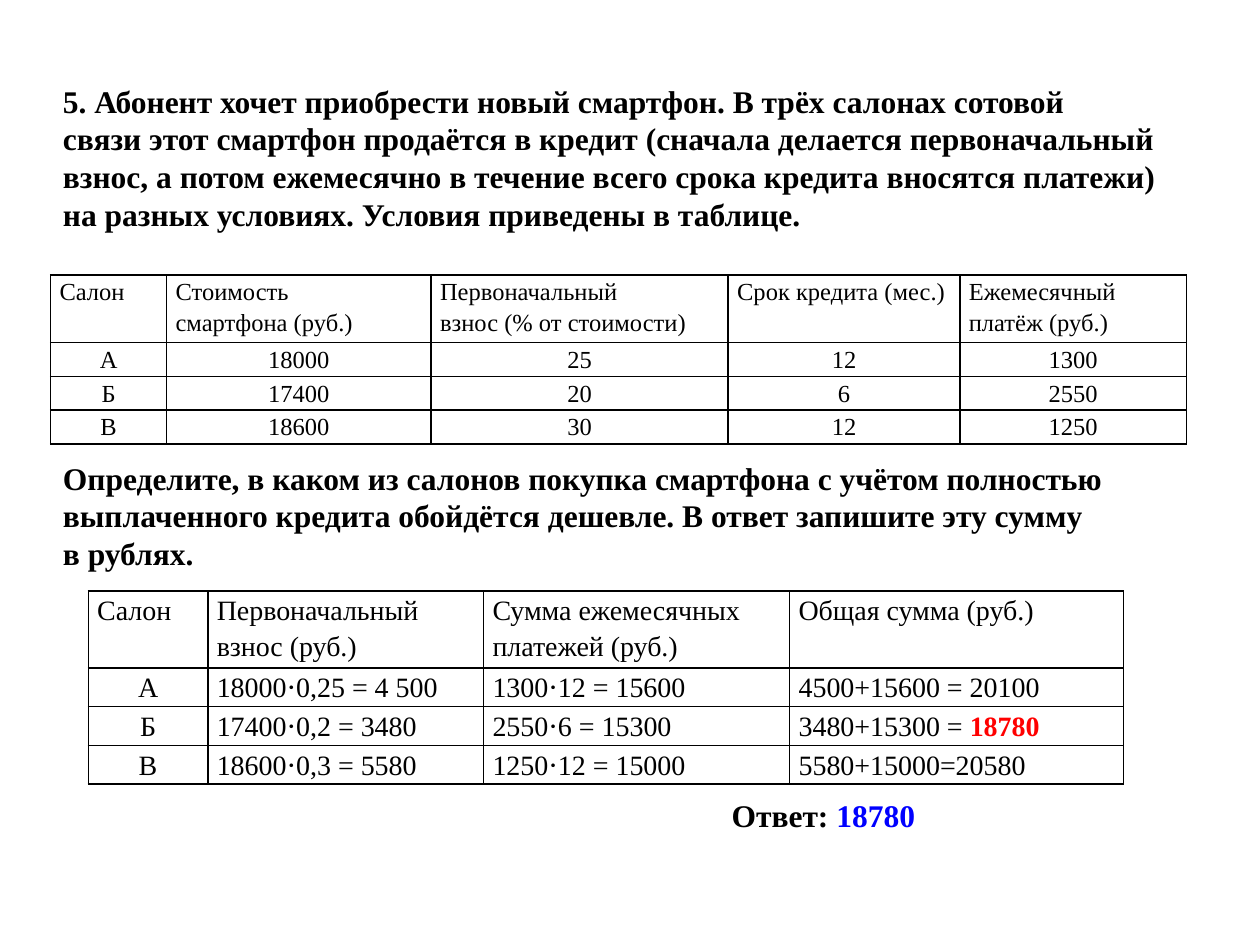
from pptx import Presentation
from pptx.dml.color import RGBColor
from pptx.enum.text import MSO_AUTO_SIZE, PP_ALIGN
from pptx.oxml.ns import qn
from pptx.util import Cm, Pt
from lxml.etree import SubElement

BLACK = RGBColor(0, 0, 0)
WHITE = RGBColor(255, 255, 255)
RED = RGBColor(255, 0, 0)
BLUE = RGBColor(0, 0, 255)

INTRO = """5. Абонент хочет приобрести новый смартфон. В трёх салонах сотовой
связи этот смартфон продаётся в кредит (сначала делается первоначальный \
взнос, а потом ежемесячно в течение всего срока кредита вносятся платежи) \
на разных условиях. Условия приведены в таблице."""

QUESTION = """Определите, в каком из салонов покупка смартфона с учётом полностью
выплаченного кредита обойдётся дешевле. В ответ запишите эту сумму
в рублях."""

OFFERS = [
    ["Салон", "Стоимость\nсмартфона (руб.)",
     "Первоначальный\nвзнос (% от стоимости)",
     "Срок кредита (мес.)", "Ежемесячный\nплатёж (руб.)"],
    ["А", "18000", "25", "12", "1300"],
    ["Б", "17400", "20", "6", "2550"],
    ["В", "18600", "30", "12", "1250"],
]

SOLUTION = [
    ["Салон", "Первоначальный\nвзнос (руб.)",
     "Сумма ежемесячных платежей (руб.)", "Общая сумма (руб.)"],
    ["А", "18000⋅0,25 = 4 500", "1300⋅12 = 15600", "4500+15600 = 20100"],
    ["Б", "17400⋅0,2 = 3480", "2550⋅6 = 15300", "3480+15300 = |18780"],
    ["В", "18600⋅0,3 = 5580", "1250⋅12 = 15000", "5580+15000=20580"],
]


class SlideBuilder:
    font = "Times New Roman"

    def __init__(self, s):
        self.s = s

    def fill_text(self, tf, text, size, bold=False, accent=BLACK,
                  align=PP_ALIGN.LEFT, spacing=None):
        for i, line in enumerate(text.split("\n")):
            p = tf.add_paragraph() if i else tf.paragraphs[0]
            p.alignment = align
            p.line_spacing = spacing
            p.font.name = self.font
            p.font.size = Pt(size)
            p.font.bold = bold
            p.font.color.rgb = BLACK
            plain, _, marked = line.partition("|")
            p.add_run().text = plain
            if marked:
                r = p.add_run()
                r.text = marked
                r.font.bold = True
                r.font.color.rgb = accent

    def text(self, left, top, width, height, text, accent=BLACK, wrap=True):
        sp = self.s.shapes.add_textbox(Cm(left), Cm(top), Cm(width), Cm(height))
        tf = sp.text_frame
        tf.word_wrap = wrap
        tf.auto_size = MSO_AUTO_SIZE.SHAPE_TO_FIT_TEXT
        self.fill_text(tf, text, 18, True, accent)

    def border(self, cell):
        tc_pr = cell._tc.get_or_add_tcPr()
        for side in ("lnL", "lnR", "lnT", "lnB"):
            ln = SubElement(tc_pr, qn(f"a:{side}"), w=str(Pt(1)))
            fill = SubElement(ln, qn("a:solidFill"))
            SubElement(fill, qn("a:srgbClr"), val=str(BLACK))

    def table(self, left, top, widths, heights, rows, size, centred,
              fill=None, accent=BLACK):
        table = self.s.shapes.add_table(
            len(rows), len(widths), Cm(left), Cm(top),
            Cm(sum(widths)), Cm(sum(heights))).table
        table.first_row = table.horz_banding = False
        for column, width in zip(table.columns, widths):
            column.width = Cm(width)
        for i, (row, height) in enumerate(zip(rows, heights)):
            table.rows[i].height = Cm(height)
            for j, text in enumerate(row):
                cell = table.cell(i, j)
                cell.margin_left = cell.margin_right = Cm(0.18)
                cell.margin_top = cell.margin_bottom = 0
                self.border(cell)
                if fill is None:
                    cell.fill.background()
                else:
                    cell.fill.solid()
                    cell.fill.fore_color.rgb = fill
                align = PP_ALIGN.CENTER if i and j < centred else PP_ALIGN.LEFT
                self.fill_text(cell.text_frame, text, size, accent=accent,
                               align=align, spacing=1.15)


def main():
    prs = Presentation()
    prs.slide_width, prs.slide_height = Cm(25.4), Cm(19.05)
    b = SlideBuilder(prs.slides.add_slide(prs.slide_layouts[6]))
    b.text(1.02, 1.52, 23.09, 3.33, INTRO)
    b.table(1.02, 5.54, [2.34, 5.33, 5.99, 4.67, 4.57],
            [1.36] + [0.68] * 3, OFFERS, 14, centred=5, fill=WHITE)
    b.text(1.02, 9.12, 23.09, 2.57, QUESTION)
    b.text(14.5, 15.93, 4.24, 1.02, "Ответ: |18780", accent=BLUE, wrap=False)
    b.table(1.78, 11.91, [2.41, 5.56, 6.17, 6.73],
            [1.55] + [0.78] * 3, SOLUTION, 16, centred=1, accent=RED)
    prs.save("out.pptx")


if __name__ == "__main__":
    main()
